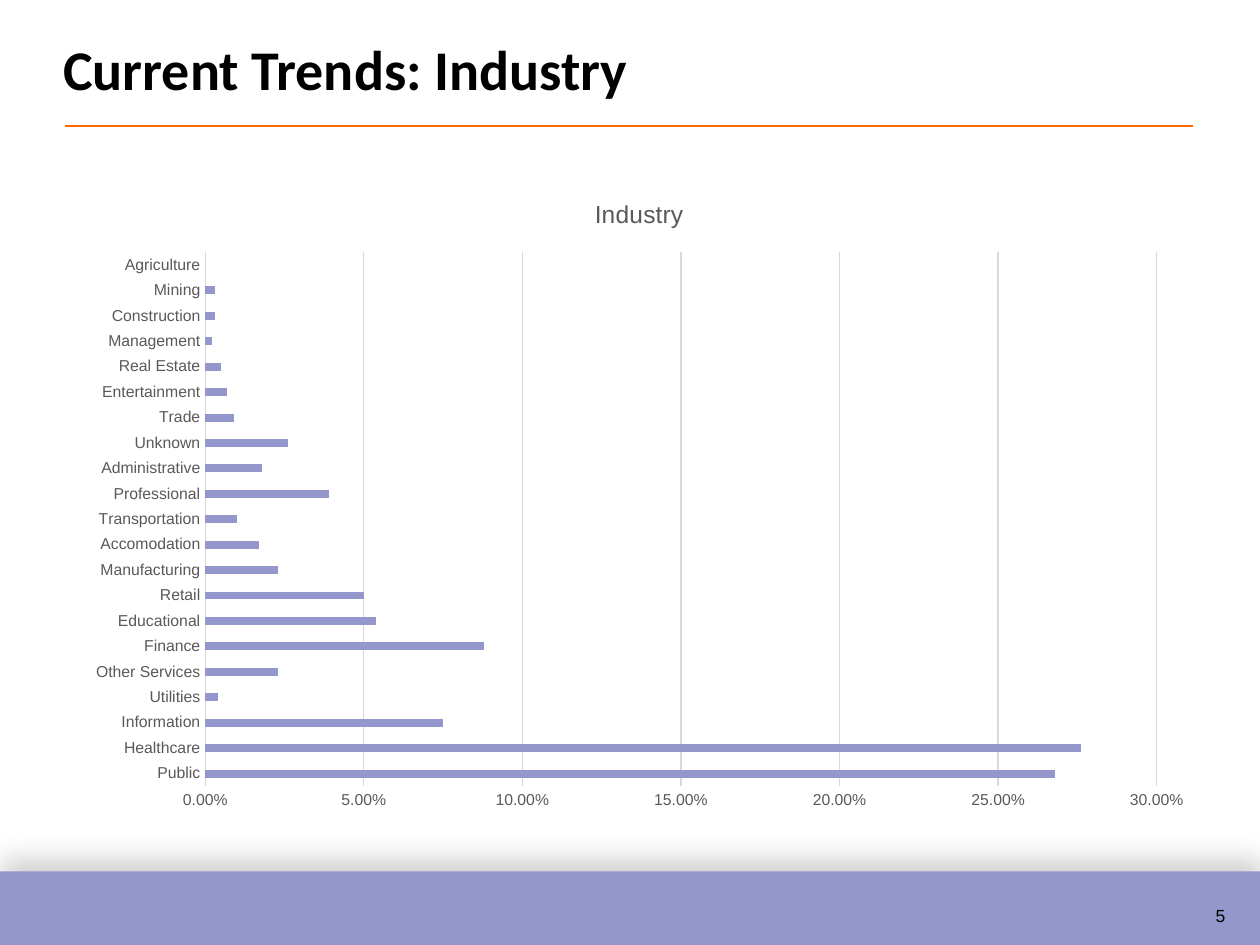
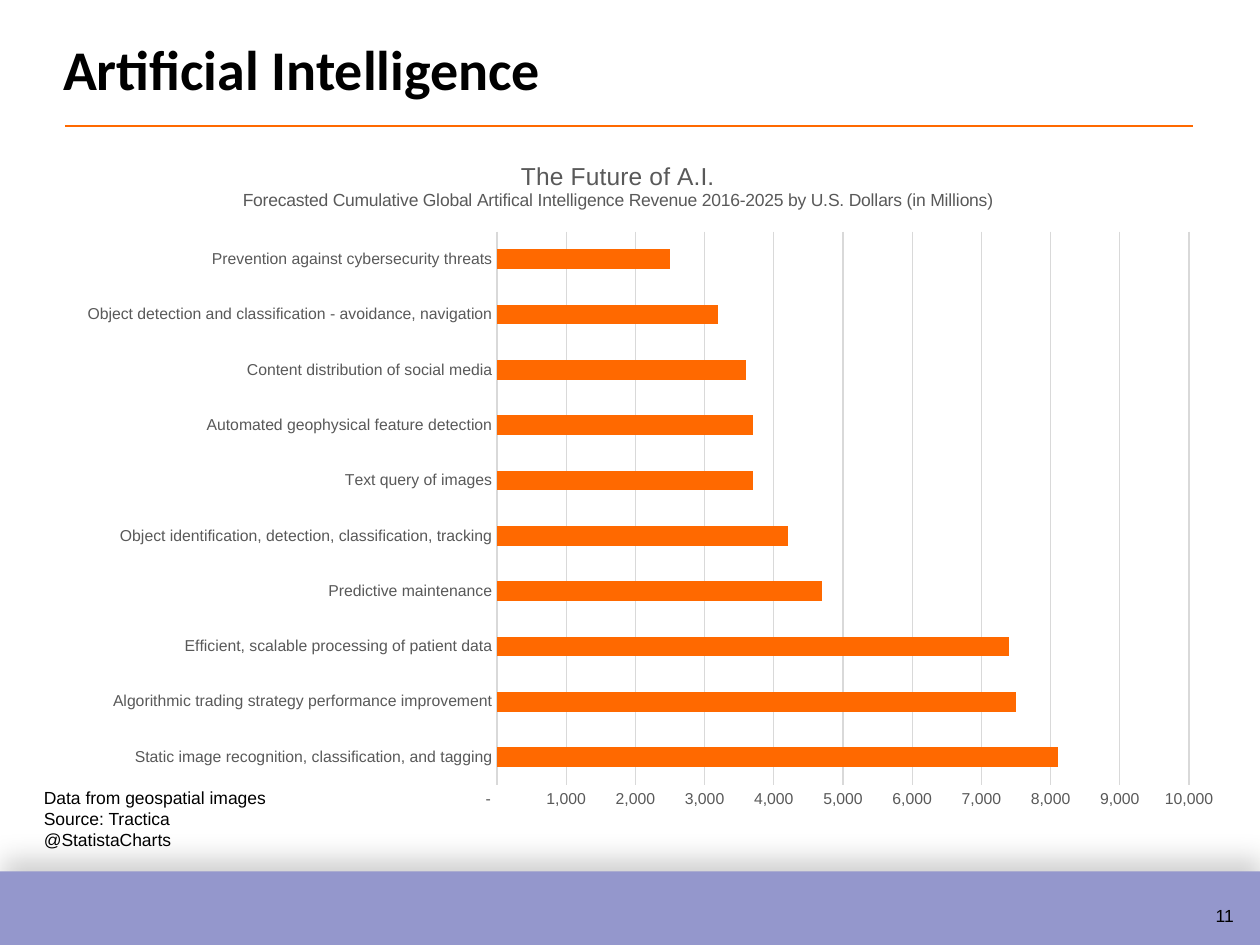
from lxml import etree
from pptx import Presentation
from pptx.chart.data import CategoryChartData
from pptx.dml.color import RGBColor
from pptx.enum.chart import XL_CHART_TYPE, XL_TICK_MARK
from pptx.enum.shapes import MSO_CONNECTOR, MSO_SHAPE
from pptx.enum.text import MSO_ANCHOR, PP_ALIGN
from pptx.oxml.ns import qn
from pptx.util import Pt

BAR = XL_CHART_TYPE.BAR_CLUSTERED
STRAIGHT = MSO_CONNECTOR.STRAIGHT
RECT = MSO_SHAPE.RECTANGLE
MIDDLE = MSO_ANCHOR.MIDDLE
LEFT = PP_ALIGN.LEFT
NONE = XL_TICK_MARK.NONE

BLACK = RGBColor(0x00, 0x00, 0x00)
GREY = RGBColor(0x59, 0x59, 0x59)
PALE = RGBColor(0xD9, 0xD9, 0xD9)
LILAC = RGBColor(0x94, 0x97, 0xCC)
ORANGE = RGBColor(0xFF, 0x69, 0x00)

WIDE, HIGH = 720, 540
BAND = (0, 498, WIDE, 42)
HEAD = (28.8, 15.84, 658.8, 46.08)
NOTE = (18, 446.4, 156.24, 43.92)

TRADES = {
    "Public": 0.268, "Healthcare": 0.276, "Information": 0.075,
    "Utilities": 0.004, "Other Services": 0.023, "Finance": 0.088,
    "Educational": 0.054, "Retail": 0.05, "Manufacturing": 0.023,
    "Accomodation": 0.017, "Transportation": 0.01, "Professional": 0.039,
    "Administrative": 0.018, "Unknown": 0.026, "Trade": 0.009,
    "Entertainment": 0.007, "Real Estate": 0.005, "Management": 0.002,
    "Construction": 0.003, "Mining": 0.003, "Agriculture": 0,
}
USES = {
    "Static image recognition, classification, and tagging": 8100,
    "Algorithmic trading strategy performance improvement": 7500,
    "Efficient, scalable processing of patient data": 7400,
    "Predictive maintenance": 4700,
    "Object identification, detection, classification, tracking": 4200,
    "Text query of images": 3700,
    "Automated geophysical feature detection": 3700,
    "Content distribution of social media": 3600,
    "Object detection and classification - avoidance, navigation": 3200,
    "Prevention against cybersecurity threats": 2500,
}


def style(font, size, color, name="Arial", bold=False):
    font.size = Pt(size)
    font.name = name
    font.bold = bold
    font.color.rgb = color


def write(frame, lines, size, color):
    for i, line in enumerate(lines):
        para = frame.add_paragraph() if i else frame.paragraphs[0]
        para.text = line
        style(para.font, size, color)


def add_text(slide, box, lines, wrap=True):
    frame = slide.shapes.add_textbox(*map(Pt, box)).text_frame
    frame.word_wrap = wrap
    write(frame, lines, 10, BLACK)
    return frame


def add_band(slide, box, number):
    x, y, w, h = box
    band = slide.shapes.add_shape(RECT, *map(Pt, box))
    band.shadow.inherit = False
    band.fill.solid()
    band.fill.fore_color.rgb = LILAC
    band.line.fill.background()
    effects = band.element.spPr.find(qn("a:effectLst"))
    shade = etree.SubElement(effects, qn("a:outerShdw"), blurRad=str(Pt(16)),
                             dist=str(Pt(8)), dir=str(277 * 60000),
                             algn="ctr", rotWithShape="0")
    tint = etree.SubElement(shade, qn("a:srgbClr"), val=str(BLACK))
    etree.SubElement(tint, qn("a:alpha"), val="19000")
    frame = add_text(slide, (x + w - 32.4, y + 9.6, 26.64, 24.48),
                     [number], wrap=False)
    frame.paragraphs[0].line_spacing = 1.5


def add_head(slide, box, text):
    x, y, w, h = box
    title = slide.shapes.title
    title.left, title.top, title.width, title.height = map(Pt, box)
    title.text_frame.vertical_anchor = MIDDLE
    para = title.text_frame.paragraphs[0]
    para.text = text
    para.alignment = LEFT
    style(para.font, 32, BLACK, "Calibri", True)
    rule = slide.shapes.add_connector(
        STRAIGHT, Pt(x + 8.64), Pt(72), Pt(x + w - 5.76), Pt(72))
    rule.line.color.rgb = ORANGE
    rule.line.width = Pt(1)
    etree.SubElement(rule.element.spPr, qn("a:effectLst"))


def lay_out(node, index, **marks):
    old = node.find(qn("c:layout"))
    if old is not None:
        node.remove(old)
    layout = etree.Element(qn("c:layout"))
    manual = etree.SubElement(layout, qn("c:manualLayout"))
    for key, value in marks.items():
        etree.SubElement(manual, qn("c:" + key), val=str(value))
    node.insert(index, layout)


def add_bars(slide, box, data, color, gap, top, step, form, lines, head, plot):
    source = CategoryChartData()
    source.categories = list(data)
    source.add_series("Series 1", list(data.values()))
    chart = slide.shapes.add_chart(BAR, *map(Pt, box), source).chart
    style(chart.font, 10, BLACK)
    chart.has_legend = False

    frame = chart.chart_title.text_frame
    write(frame, lines, 10, GREY)
    frame.paragraphs[0].font.size = Pt(14)
    chart.chart_title.include_in_layout = False

    bars = chart.plots[0]
    bars.gap_width = gap
    bars.vary_by_categories = False
    fill = bars.series[0].format.fill
    fill.solid()
    fill.fore_color.rgb = color

    names, scale = chart.category_axis, chart.value_axis
    for axis in (names, scale):
        axis.major_tick_mark = axis.minor_tick_mark = NONE
        style(axis.tick_labels.font, 9, GREY)
    scale.minimum_scale = 0
    scale.maximum_scale = top
    scale.major_unit = step
    scale.tick_labels.number_format = form
    scale.tick_labels.number_format_is_linked = False
    scale.format.line.fill.background()
    for line in (names.format.line, scale.major_gridlines.format.line):
        line.color.rgb = PALE
        line.width = Pt(0.75)

    root = chart.element
    x, y = head
    lay_out(root.find(".//" + qn("c:title")), 1,
            xMode="edge", yMode="edge", x=x, y=y)
    x, y, w, h = plot
    lay_out(root.find(".//" + qn("c:plotArea")), 0, layoutTarget="inner",
            xMode="edge", yMode="edge", x=x, y=y, w=w, h=h)


def add_page(deck, title, number):
    slide = deck.slides.add_slide(deck.slide_layouts[5])
    add_band(slide, BAND, number)
    add_head(slide, HEAD, title)
    return slide


def main():
    deck = Presentation()
    deck.slide_width, deck.slide_height = Pt(WIDE), Pt(HIGH)

    trends = add_page(deck, "Current Trends: Industry", "5")
    add_bars(trends, (39.6, 95.76, 647.28, 372.24), TRADES, LILAC, 219,
             0.3, 0.05, "0.00%", ["Industry"],
             (0.46, 0.04), (0.12, 0.13, 0.84, 0.82))

    future = add_page(deck, "Artificial Intelligence", "11")
    add_bars(future, (36, 77.76, 670.32, 390.24), USES, ORANGE, 182,
             10000, 1000, '_(* #,##0_);_(* \\(#,##0\\);_(* "-"??_);_(@_)',
             ["The Future of A.I.",
              "Forecasted Cumulative Global Artifical Intelligence Revenue "
              "2016-2025 by U.S. Dollars (in Millions)"],
             (0.15, 0.03), (0.37, 0.14, 0.59, 0.81))
    add_text(future, NOTE, ["Data from geospatial images",
                            "Source: Tractica", "@StatistaCharts"])

    deck.save("out.pptx")


if __name__ == "__main__":
    main()
